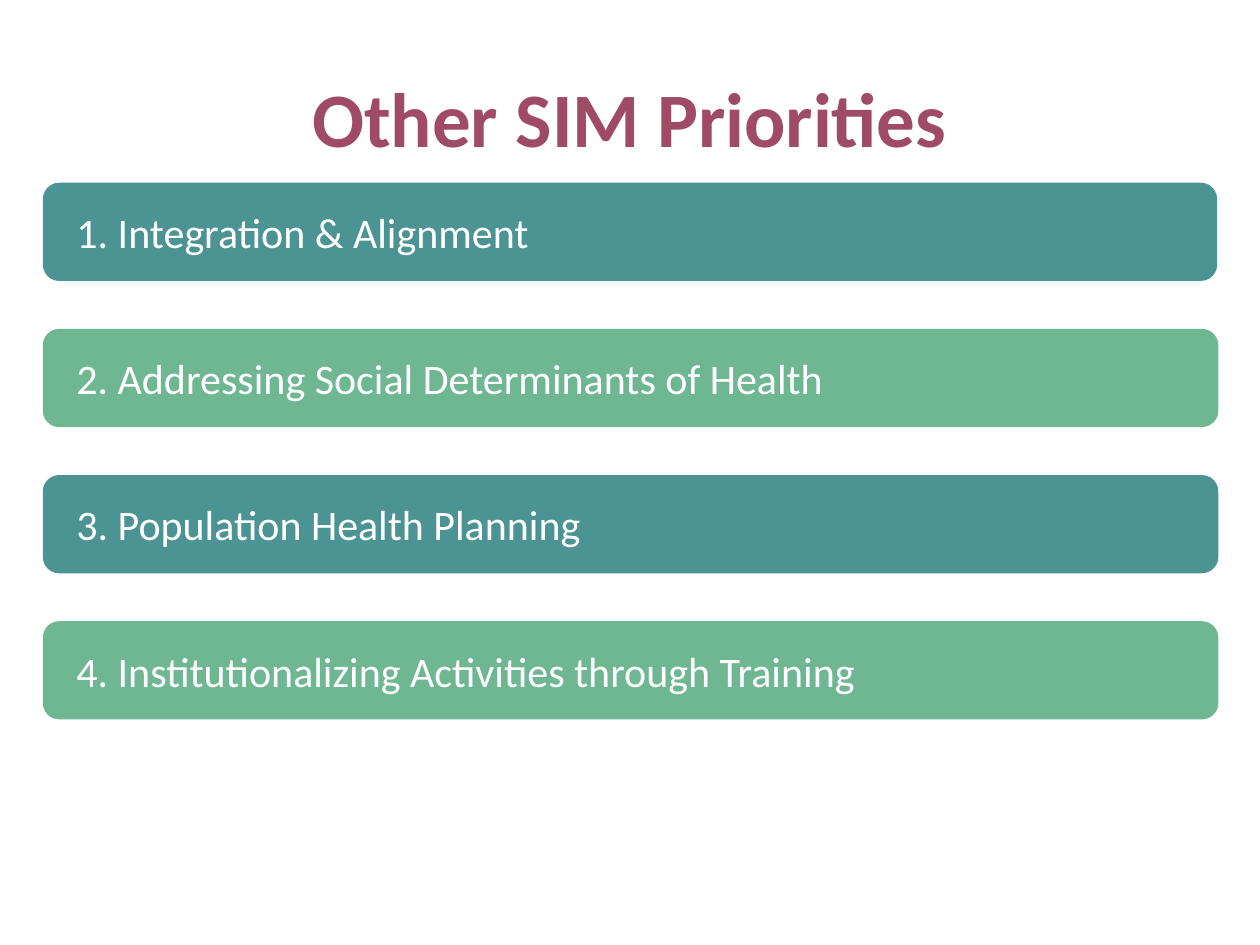
from pptx import Presentation
from pptx.dml.color import RGBColor
from pptx.enum.shapes import MSO_SHAPE as Shape
from pptx.enum.text import MSO_ANCHOR as Anchor, PP_ALIGN as Align
from pptx.oxml.ns import qn
from pptx.oxml.xmlchemy import OxmlElement
from pptx.util import Inches, Pt


def color(hex_value):
    return RGBColor.from_string(hex_value)


def add_text(shape, text, size, hex_value, align, bold=False):
    frame = shape.text_frame
    frame.word_wrap = True
    frame.vertical_anchor = Anchor.MIDDLE
    paragraph = frame.paragraphs[0]
    paragraph.alignment = align
    run = paragraph.add_run()
    run.text = text
    run.font.name = "Calibri"
    run.font.size = Pt(size)
    run.font.bold = bold
    run.font.color.rgb = color(hex_value)
    return paragraph


presentation = Presentation()
presentation.slide_width = Inches(10)
presentation.slide_height = Inches(7.5)
slide = presentation.slides.add_slide(presentation.slide_layouts[6])

# Title
title = slide.shapes.add_textbox(Inches(0.5), Inches(0.3), Inches(9), Inches(1.25))
add_text(title, "Other SIM Priorities", 44, "9F4B65", Align.CENTER, bold=True)

# Priority bars, evenly spaced, in alternating colours
priorities = [
    "Integration & Alignment",
    "Addressing Social Determinants of Health",
    "Population Health Planning",
    "Institutionalizing Activities through Training",
]
bar_colors = ["006666", "339966"]
first_top, pitch = 1.45, 1.16

for index, priority in enumerate(priorities):
    width = 9.32 if index == 0 else 9.33
    bar = slide.shapes.add_shape(
        Shape.ROUNDED_RECTANGLE, Inches(0.34), Inches(first_top + index * pitch),
        Inches(width), Inches(0.78))
    bar.shadow.inherit = False
    bar.line.fill.background()
    bar.fill.solid()
    bar.fill.fore_color.rgb = color(bar_colors[index % 2])

    # 70 % opacity
    alpha = OxmlElement("a:alpha")
    alpha.set("val", "70000")
    bar._element.spPr.find(qn("a:solidFill")).find(qn("a:srgbClr")).append(alpha)

    paragraph = add_text(bar, f"{index + 1}. {priority}", 24, "FFFFFF", Align.LEFT)
    paragraph._p.get_or_add_pPr().set("marL", str(Inches(0.13)))

presentation.save("out.pptx")
